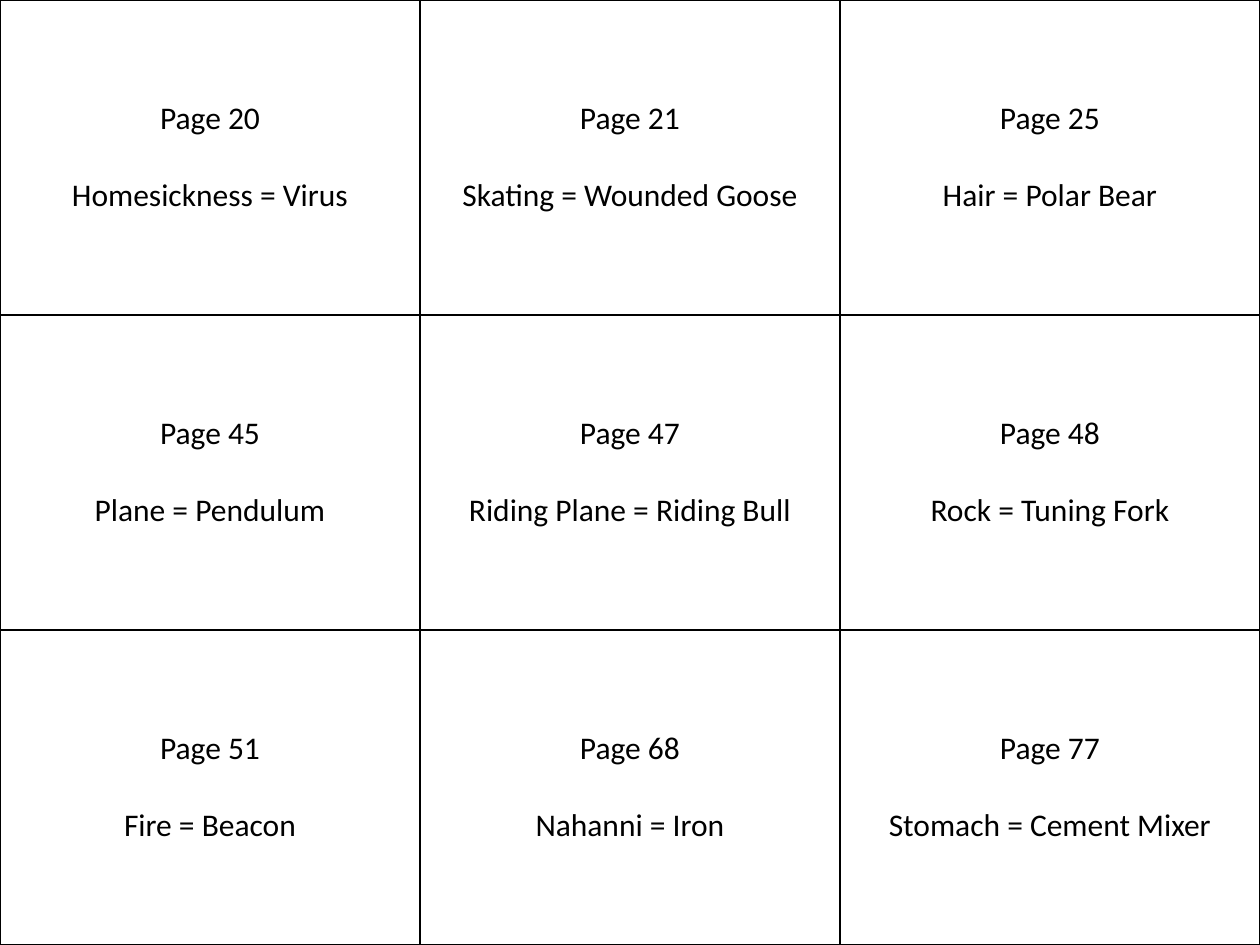
from lxml.etree import SubElement
from pptx import Presentation
from pptx.dml.color import RGBColor
from pptx.enum.text import MSO_ANCHOR, PP_ALIGN
from pptx.oxml.ns import qn
from pptx.util import Inches, Pt

COLORS = {"ink": "000000", "paper": "FFFFFF"}
FONT = "Calibri"
WIDTH, HEIGHT = Inches(10), Inches(7.5)
CARDS = [
    [("Page 20", "Homesickness = Virus"),
     ("Page 21", "Skating = Wounded Goose"),
     ("Page 25", "Hair = Polar Bear")],
    [("Page 45", "Plane = Pendulum"),
     ("Page 47", "Riding Plane = Riding Bull"),
     ("Page 48", "Rock = Tuning Fork")],
    [("Page 51", "Fire = Beacon"),
     ("Page 68", "Nahanni = Iron"),
     ("Page 77", "Stomach = Cement Mixer")],
]


def add_line(paragraph, text, space_before=0):
    paragraph.alignment = PP_ALIGN.CENTER
    paragraph.space_before = Pt(space_before)
    run = paragraph.add_run()
    run.text = text
    run.font.name = FONT
    run.font.size = Pt(18)
    run.font.color.rgb = RGBColor.from_string(COLORS["ink"])


def set_borders(cell):
    properties = cell._tc.get_or_add_tcPr()
    for position, side in enumerate(("lnL", "lnR", "lnT", "lnB")):
        line = SubElement(properties, qn(f"a:{side}"), w=str(Pt(1)))
        fill = SubElement(line, qn("a:solidFill"))
        SubElement(fill, qn("a:srgbClr"), val=COLORS["ink"])
        properties.insert(position, line)


def fill_card(cell, page, comparison):
    cell.vertical_anchor = MSO_ANCHOR.MIDDLE
    cell.fill.solid()
    cell.fill.fore_color.rgb = RGBColor.from_string(COLORS["paper"])
    set_borders(cell)
    add_line(cell.text_frame.paragraphs[0], page)
    add_line(cell.text_frame.add_paragraph(), comparison, space_before=22)


def add_card_table(slide):
    shape = slide.shapes.add_table(len(CARDS), len(CARDS[0]), 0, 0, WIDTH, HEIGHT)
    table = shape.table
    table.first_row = False
    table.horz_banding = False
    for row in table.rows:
        row.height = HEIGHT // len(CARDS)
    for row_index, cards in enumerate(CARDS):
        for column_index, (page, comparison) in enumerate(cards):
            fill_card(table.cell(row_index, column_index), page, comparison)


def main():
    presentation = Presentation()
    presentation.slide_width, presentation.slide_height = WIDTH, HEIGHT
    slide = presentation.slides.add_slide(presentation.slide_layouts[6])
    add_card_table(slide)
    presentation.save("out.pptx")


if __name__ == "__main__":
    main()
